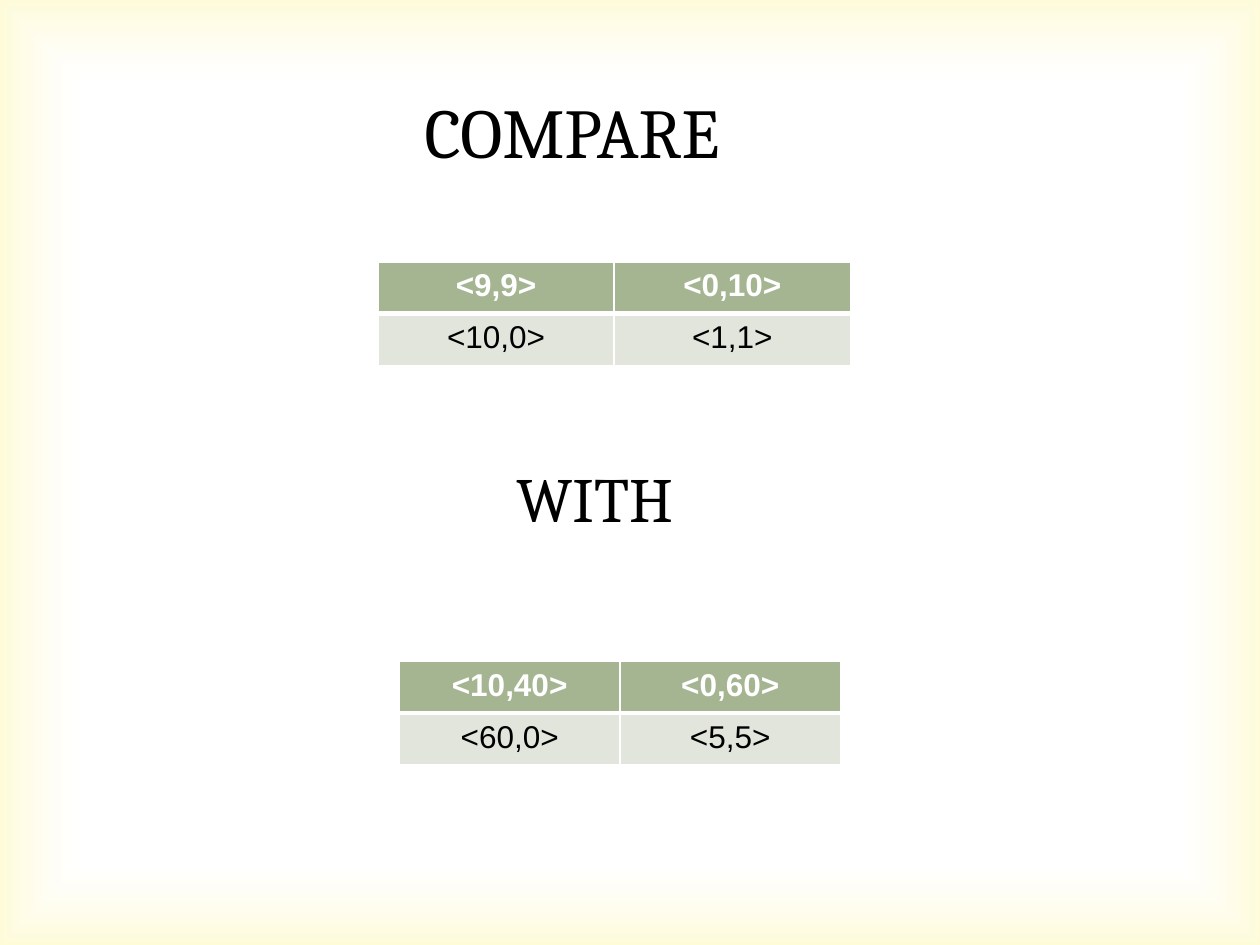
from dataclasses import dataclass

from lxml import etree
from pptx import Presentation
from pptx.dml.color import RGBColor
from pptx.enum import shapes, text
from pptx.oxml import ns
from pptx.util import Inches, Pt


@dataclass(frozen=True)
class Theme:
    white: str = "FFFFFF"
    ink: str = "000000"
    glow: str = "FCF059"
    head: str = "A5B592"
    body: str = "E1E5DC"
    serif: str = "Cambria"
    sans: str = "Arial"
    title: int = 40
    label: int = 36
    cell: int = 18


THEME = Theme()


def add(parent, tag, **attrs):
    return etree.SubElement(parent, ns.qn(tag), attrs)


def style(item, **values):
    for name, value in values.items():
        setattr(item, name, value)


def paint(font, face, size, tint, bold=False):
    style(font, name=face, size=Pt(size), bold=bold)
    font.color.rgb = RGBColor.from_string(tint)


def add_glow(slide, width, height):
    """Put a soft yellow frame behind everything else."""
    box = slide.shapes.add_shape(shapes.MSO_SHAPE.RECTANGLE, 0, 0, width, height)
    box.shadow.inherit = False
    box.line.fill.background()
    grad = etree.Element(ns.qn("a:gradFill"), rotWithShape="1")
    stops = add(grad, "a:gsLst")
    for pos, tint, alpha in ((83, THEME.white, 11), (100, THEME.glow, 23)):
        stop = add(stops, "a:gs", pos=str(pos * 1000))
        color = add(stop, "a:srgbClr", val=tint)
        add(color, "a:alpha", val=str(alpha * 1000))
    center = add(grad, "a:path", path="rect")
    add(center, "a:fillToRect", **dict.fromkeys("ltrb", "50000"))
    box.element.spPr.find(ns.qn("a:prstGeom")).addnext(grad)
    slide.shapes.element.insert(2, box.element)


def set_label(box, words, area, size):
    left, top, width, height = map(Inches, area)
    style(box, left=left, top=top, width=width, height=height)
    frame = box.text_frame
    frame.text = words
    style(frame, word_wrap=False, auto_size=text.MSO_AUTO_SIZE.SHAPE_TO_FIT_TEXT,
          vertical_anchor=text.MSO_ANCHOR.TOP)
    line = frame.paragraphs[0]
    line.alignment = text.PP_ALIGN.LEFT
    paint(line.runs[0].font, THEME.serif, size, THEME.ink)


def set_edges(cell, **widths):
    props = cell._tc.get_or_add_tcPr()
    for side in "LRTB":
        edge = add(props, f"a:ln{side}", w=str(Pt(widths.get(side, 1))))
        add(add(edge, "a:solidFill"), "a:srgbClr", val=THEME.white)


def set_cell(cell, words, first):
    set_edges(cell, **({"B": 3} if first else {"T": 3}))
    cell.fill.solid()
    cell.fill.fore_color.rgb = RGBColor.from_string(THEME.head if first else THEME.body)
    cell.text = words
    line = cell.text_frame.paragraphs[0]
    line.alignment = text.PP_ALIGN.CENTER
    tint = THEME.white if first else THEME.ink
    paint(line.runs[0].font, THEME.sans, THEME.cell, tint, first)


def add_grid(slide, rows, left, top, width):
    height = 0.41 * len(rows)
    grid = slide.shapes.add_table(len(rows), len(rows[0]), Inches(left),
                                  Inches(top), Inches(width), Inches(height)).table
    for r, row in enumerate(rows):
        for c, words in enumerate(row):
            set_cell(grid.cell(r, c), words, r == 0)


def main():
    deck = Presentation()
    style(deck, slide_width=Inches(10), slide_height=Inches(7.5))
    slide = deck.slides.add_slide(deck.slide_layouts[5])
    add_glow(slide, deck.slide_width, deck.slide_height)
    set_label(slide.shapes.title, "COMPARE", (3.27, 0.65, 3.06, 0.77), THEME.title)
    add_grid(slide, (("<9,9>", "<0,10>"), ("<10,0>", "<1,1>")), 3, 2.08, 3.75)
    label = slide.shapes.add_textbox(0, 0, 0, 0)
    set_label(label, "WITH", (4, 3.6, 1.61, 0.71), THEME.label)
    add_grid(slide, (("<10,40>", "<0,60>"), ("<60,0>", "<5,5>")), 3.17, 5.25, 3.5)
    deck.save("out.pptx")


if __name__ == "__main__":
    main()
